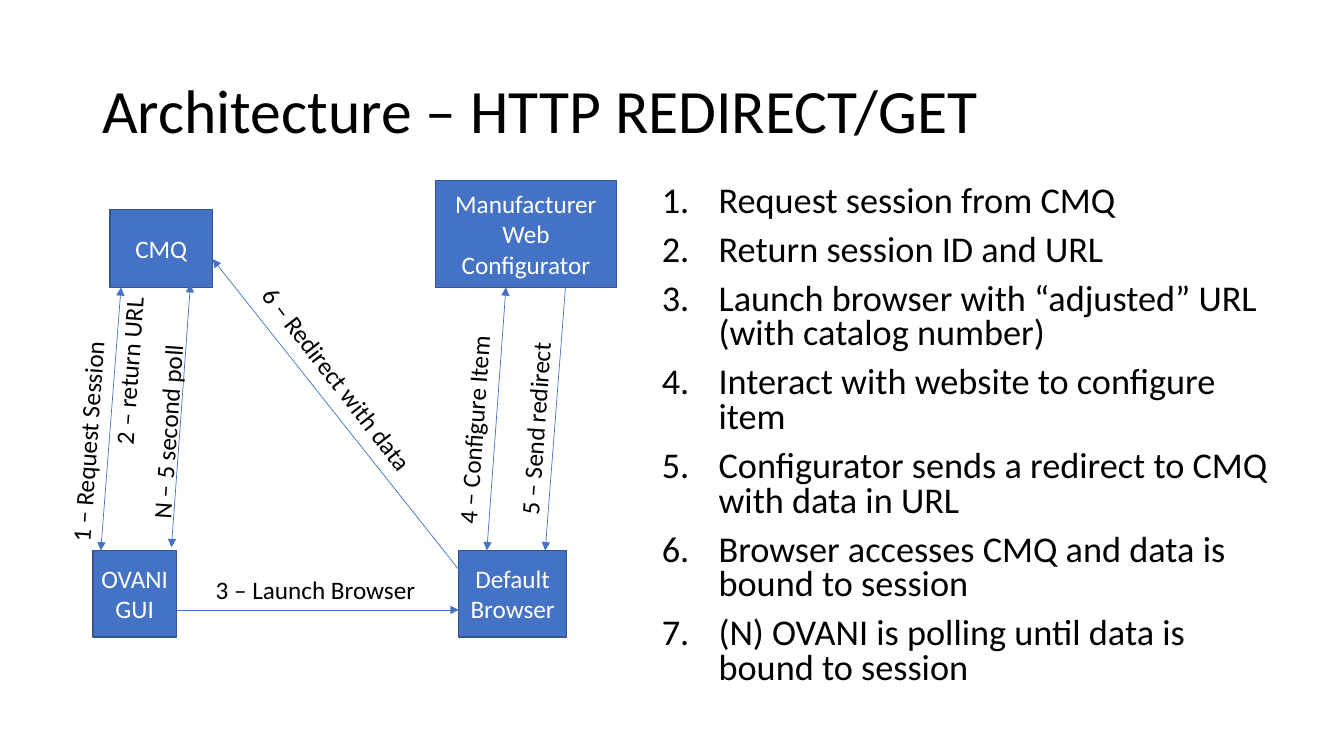
import dataclasses

import lxml.etree
import pptx
import pptx.dml.color
import pptx.enum.shapes
import pptx.enum.text
import pptx.oxml.ns
import pptx.util

Cm = pptx.util.Cm
Pt = pptx.util.Pt


@dataclasses.dataclass(frozen=True)
class Theme:
    font: str = "Calibri"
    ink: str = "000000"
    paper: str = "FFFFFF"
    blue: str = "4472C4"
    border: str = "325491"
    title_size: float = 44
    list_size: float = 25.9
    label_size: float = 18
    border_width: float = 1
    arrow_width: float = 0.5


def rgb(code):
    return pptx.dml.color.RGBColor.from_string(code)


def add_xml(parent, tag, **attributes):
    return lxml.etree.SubElement(parent, pptx.oxml.ns.qn(tag), attributes)


class SlideBuilder:
    def __init__(self, page, theme):
        self.page = page
        self.theme = theme

    def style_text(self, frame, size, color):
        for para in frame.paragraphs:
            for span in para.runs:
                span.font.name = self.theme.font
                span.font.size = Pt(size)
                span.font.color.rgb = rgb(color)

    def text_box(self, text, left, top, width, height, size):
        box = self.page.shapes.add_textbox(Cm(left), Cm(top), Cm(width), Cm(height))
        frame = box.text_frame
        frame.word_wrap = True
        frame.text = text
        self.style_text(frame, size, self.theme.ink)
        return box

    def title(self, text, left, top, width, height):
        frame = self.text_box(text, left, top, width, height, self.theme.title_size).text_frame
        frame.vertical_anchor = pptx.enum.text.MSO_ANCHOR.MIDDLE
        frame.paragraphs[0].line_spacing = 0.9

    def numbered_list(self, items, left, top, width, height):
        box = self.text_box("\n".join(items), left, top, width, height, self.theme.list_size)
        indent = Cm(1.43)
        for para in box.text_frame.paragraphs:
            para.line_spacing = 0.8
            para.space_before = Pt(10)
            properties = para._p.get_or_add_pPr()
            properties.set("marL", str(indent))
            properties.set("indent", str(-indent))
            add_xml(properties, "a:buFont", typeface="+mj-lt")
            add_xml(properties, "a:buAutoNum", type="arabicPeriod")

    def node(self, text, left, top, width, height):
        box = self.page.shapes.add_shape(
            pptx.enum.shapes.MSO_SHAPE.RECTANGLE, Cm(left), Cm(top), Cm(width), Cm(height))
        box.shadow.inherit = False
        box.fill.solid()
        box.fill.fore_color.rgb = rgb(self.theme.blue)
        box.line.color.rgb = rgb(self.theme.border)
        box.line.width = Pt(self.theme.border_width)
        frame = box.text_frame
        frame.word_wrap = True
        frame.margin_left = frame.margin_right = Cm(0.1)
        frame.vertical_anchor = pptx.enum.text.MSO_ANCHOR.MIDDLE
        frame.text = text
        frame.paragraphs[0].alignment = pptx.enum.text.PP_ALIGN.CENTER
        self.style_text(frame, self.theme.label_size, self.theme.paper)

    def arrow(self, start, end, two_way):
        line = self.page.shapes.add_connector(
            pptx.enum.shapes.MSO_CONNECTOR.STRAIGHT, *(Cm(value) for value in start + end))
        line.line.color.rgb = rgb(self.theme.blue)
        line.line.width = Pt(self.theme.arrow_width)
        outline = line.line._get_or_add_ln()
        if two_way:
            add_xml(outline, "a:headEnd", type="triangle")
        add_xml(outline, "a:tailEnd", type="triangle")
        add_xml(line._element.spPr, "a:effectLst")

    def label(self, text, center, width, rotation):
        """Place a one-line label by its center, turned clockwise in degrees."""
        height = 1.02
        box = self.text_box(text, center[0] - width / 2, center[1] - height / 2,
                            width, height, self.theme.label_size)
        box.text_frame.word_wrap = False
        box.text_frame.auto_size = pptx.enum.text.MSO_AUTO_SIZE.SHAPE_TO_FIT_TEXT
        box.rotation = rotation


STEPS = [
    "Request session from CMQ",
    "Return session ID and URL",
    "Launch browser with “adjusted” URL (with catalog number)",
    "Interact with website to configure item",
    "Configurator sends a redirect to CMQ with data in URL",
    "Browser accesses CMQ and data is bound to session",
    "(N) OVANI is polling until data is bound to session",
]

UPPER_EDGE, LOWER_EDGE = 7.24, 13.87
LOWER_HEIGHT = 2.18
LAUNCH_Y = 15.37

NODES = [
    ("OVANI\vGUI", 2.34, LOWER_EDGE, 2.11, LOWER_HEIGHT),
    ("Default\vBrowser", 11.56, LOWER_EDGE, 2.72, LOWER_HEIGHT),
    ("CMQ", 2.77, 5.28, 2.59, 1.96),
    ("Manufacturer\vWeb\vConfigurator", 10.97, 4.55, 4.57, 2.69),
]

# start, end, arrowheads at both ends
ARROWS = [
    ((2.54, LOWER_EDGE), (3.05, UPPER_EDGE), True),
    ((4.45, LAUNCH_Y), (11.56, LAUNCH_Y), False),
    ((12.27, LOWER_EDGE), (12.75, UPPER_EDGE), True),
    ((14.25, UPPER_EDGE), (13.74, LOWER_EDGE), False),
    ((11.56, 14.35), (5.36, 6.53), False),
    ((4.32, 13.79), (4.8, 7.16), True),
]

STEEP = 274
# text, center, width, rotation
LABELS = [
    ("1 – Request Session", (2.21, 11.1), 5.64, STEEP),
    ("2 – return URL", (3.25, 9.32), 4.27, STEEP),
    ("3 – Launch Browser", (7.99, 14.86), 5.61, 0),
    ("4 – Configure Item", (11.94, 10.8), 5.33, STEEP),
    ("5 – Send redirect", (13.49, 10.77), 4.93, STEEP),
    ("6 – Redirect with data", (8.52, 9.58), 6.22, 52.2),
    ("N – 5 second poll", (4.22, 10.85), 4.98, STEEP),
]


def main():
    deck = pptx.Presentation()
    deck.slide_width, deck.slide_height = Cm(33.87), Cm(19.05)
    builder = SlideBuilder(deck.slides.add_slide(deck.slide_layouts[6]), Theme())
    builder.title("Architecture – HTTP REDIRECT/GET", 2.33, 1.02, 29.21, 3.68)
    builder.numbered_list(STEPS, 16.43, 4.55, 15.82, 13.49)
    for node in NODES:
        builder.node(*node)
    for arrow in ARROWS:
        builder.arrow(*arrow)
    for label in LABELS:
        builder.label(*label)
    deck.save("out.pptx")


if __name__ == "__main__":
    main()
